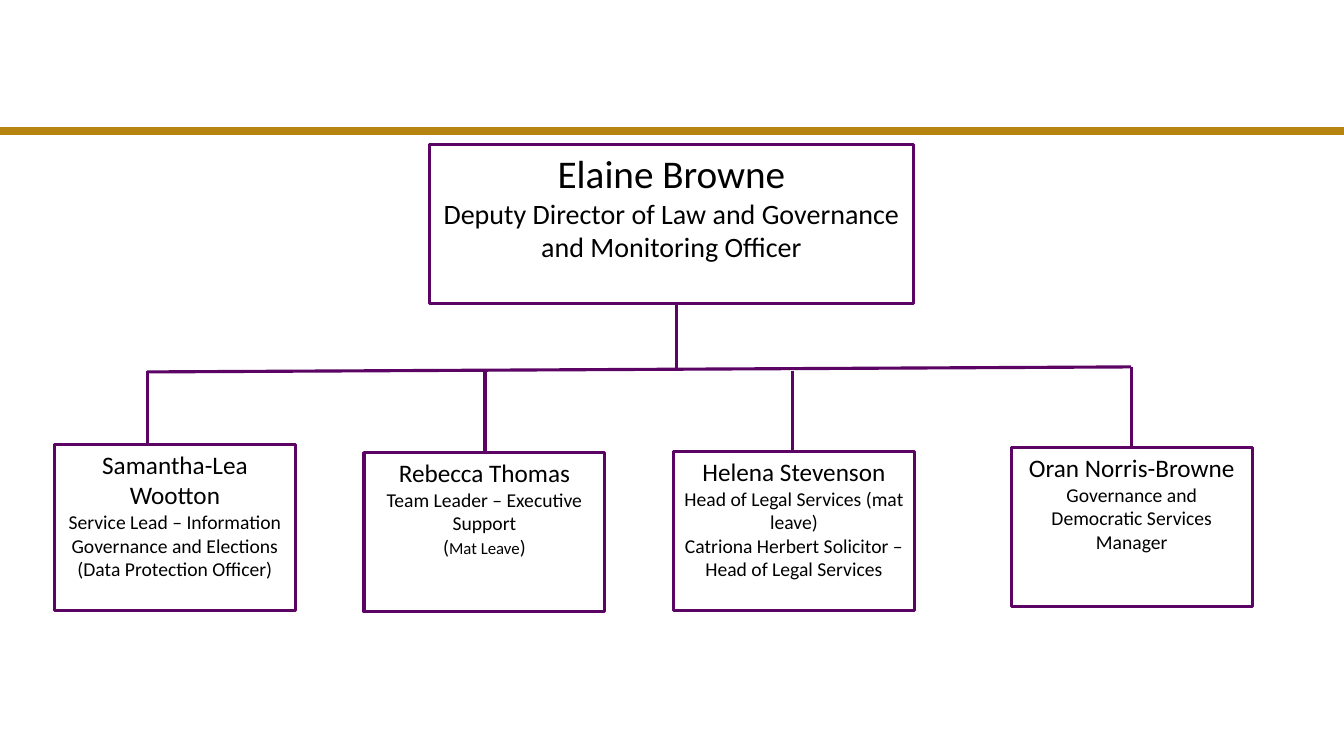
from pptx import Presentation
from pptx import util as u
from pptx.dml.color import RGBColor
from pptx.enum import shapes, text
from pptx.oxml.ns import qn
from lxml import etree

PX = 9144  # 100 px to the inch
PURPLE = RGBColor(0x5C, 0x04, 0x64)
GOLD = RGBColor(0xB5, 0x85, 0x0F)
BLACK = RGBColor(0, 0, 0)
FONT = {"name": "Calibri"}
FRAME = {
    "word_wrap": True,
    "auto_size": text.MSO_AUTO_SIZE.NONE,
    "vertical_anchor": text.MSO_ANCHOR.TOP,
}
POST_WIDTH = 239

DIRECTOR = [
    [("Elaine Browne", 28)],
    [("Deputy Director of Law and Governance and Monitoring Officer", 20)],
]
# box left, top, height; drop line x, top; paragraphs of (text, size) runs
POSTS = [
    (54, 441, 165, 146, 368, [
        [("Samantha-Lea Wootton", 18)],
        [("Service Lead – Information Governance and Elections "
          "(Data Protection Officer)", 14)],
    ]),
    (361, 449, 158, 481, 368, [
        [("Rebecca Thomas", 18)],
        [("Team Leader – Executive Support", 14)],
        [("(", 14), ("Mat Leave", 12), (")", 14)],
    ]),
    (668, 448, 158, 786, 368, [
        [("Helena Stevenson", 18)],
        [("Head of Legal Services (mat leave)", 14)],
        [("Catriona Herbert Solicitor – Head of Legal Services", 14)],
    ]),
    (1003, 444, 158, 1122, 364, [
        [("Oran Norris-Browne", 18)],
        [("Governance and Democratic Services Manager", 14)],
    ]),
]


def set_all(obj, values):
    for name, value in values.items():
        setattr(obj, name, value)


def add_line(s, x1, y1, x2, y2, color=PURPLE, width=2.25):
    ends = [v * PX for v in (x1, y1, x2, y2)]
    line = s.shapes.add_connector(shapes.MSO_CONNECTOR.STRAIGHT, *ends)
    line.line.color.rgb = color
    line.line.width = u.Pt(width)
    etree.SubElement(line._element.spPr, qn("a:effectLst"))


def add_box(s, left, top, width, height, paragraphs):
    box = [v * PX for v in (left, top, width, height)]
    sp = s.shapes.add_shape(shapes.MSO_SHAPE.RECTANGLE, *box)
    sp.shadow.inherit = False
    sp.fill.background()
    sp.line.color.rgb = PURPLE
    sp.line.width = u.Pt(2.25)
    tf = sp.text_frame
    set_all(tf, FRAME)
    for i, runs in enumerate(paragraphs):
        p = tf.add_paragraph() if i else tf.paragraphs[0]
        p.alignment = text.PP_ALIGN.CENTER
        for words, size in runs:
            r = p.add_run()
            r.text = words
            set_all(r.font, {**FONT, "size": u.Pt(size)})
            r.font.color.rgb = BLACK


def main():
    prs = Presentation()
    prs.slide_width, prs.slide_height = 1333 * PX, 750 * PX
    s = prs.slides.add_slide(prs.slide_layouts[6])

    add_line(s, 0, 130, 1333, 130, GOLD, 6)
    add_box(s, 426, 143, 480, 158, DIRECTOR)
    add_line(s, 671, 301, 671, 368)
    add_line(s, 1122, 364, 146, 369)
    for left, top, height, drop_x, drop_top, paragraphs in POSTS:
        add_line(s, drop_x, drop_top, drop_x, top)
        add_box(s, left, top, POST_WIDTH, height, paragraphs)

    prs.save("out.pptx")


if __name__ == "__main__":
    main()
